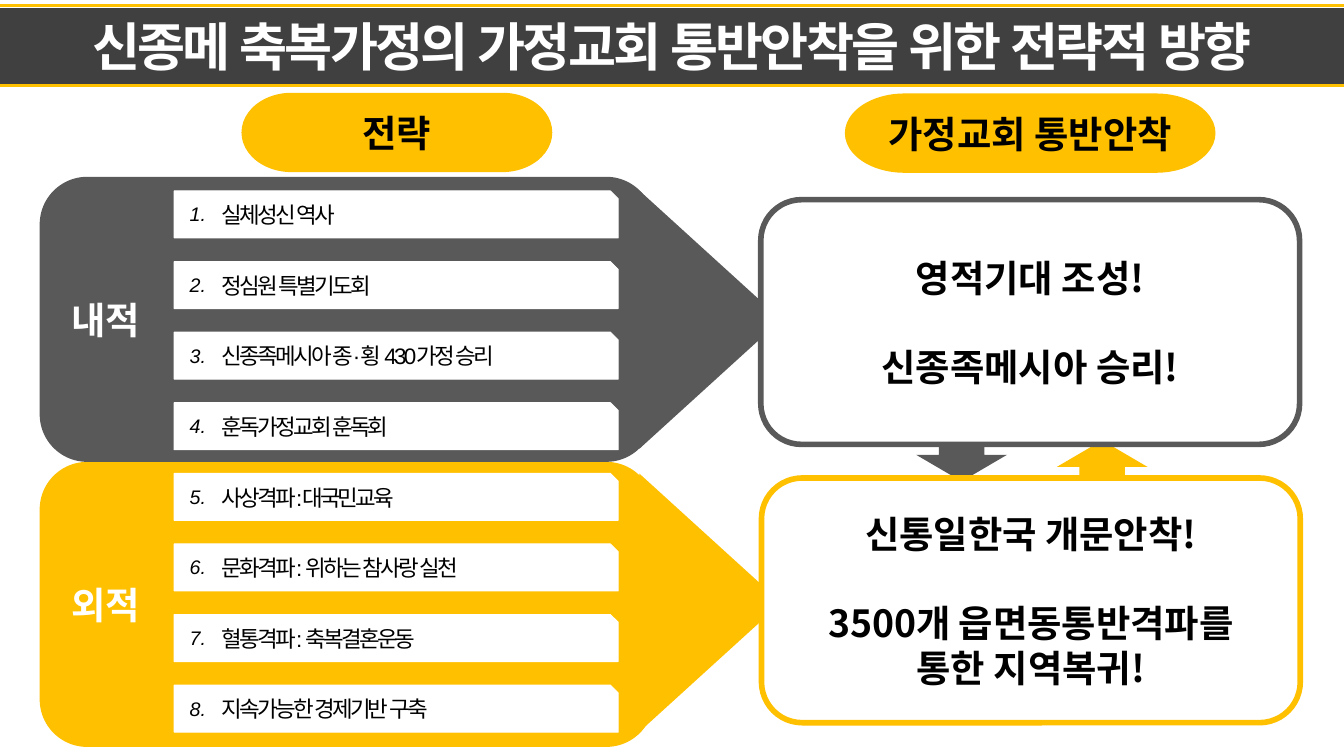
import pptx
import pptx.dml.color
import pptx.enum.shapes
import pptx.enum.text
import pptx.oxml
import pptx.oxml.ns
import pptx.util

SHAPE = pptx.enum.shapes.MSO_SHAPE
ALIGN = pptx.enum.text.PP_ALIGN
PX = 9144  # 100 px to the inch
WIDTH, HEIGHT = 1998, 1123
GRAY, GOLD, DARK, WHITE, BLACK = "595959", "FFC000", "404040", "FFFFFF", "000000"
HEADING_FONT, BODY_FONT = "Noto Sans CJK KR", "Arial"

STRATEGIES = [
    "실체성신 역사",
    "정심원 특별기도회",
    "신종족메시아 종·횡 430가정 승리",
    "훈독가정교회 훈독회",
    "사상격파:대국민교육",
    "문화격파: 위하는 참사랑 실천",
    "혈통격파: 축복결혼운동",
    "지속가능한 경제기반 구축",
]
STRIP_TOP, STRIP_PITCH = 284, 105


def color(value):
    return pptx.dml.color.RGBColor.from_string(value)


def emu(*lengths):
    return [pptx.util.Emu(length * PX) for length in lengths]


def add_block(page, kind, frame, fill, line=None, line_width=1, rotation=0):
    block = page.shapes.add_shape(kind, *emu(*frame))
    block.shadow.inherit = False
    block.rotation = rotation
    block.fill.solid()
    block.fill.fore_color.rgb = color(fill)
    if line:
        block.line.color.rgb = color(line)
        block.line.width = pptx.util.Pt(line_width)
    else:
        block.line.fill.background()
    return block


def add_rule(page, y):
    rule = page.shapes.add_connector(
        pptx.enum.shapes.MSO_CONNECTOR.STRAIGHT, *emu(0, y, WIDTH, y))
    rule.line.color.rgb = color(GOLD)
    rule.line.width = pptx.util.Pt(3)
    rule._element.spPr.append(pptx.oxml.parse_xml(
        f"<a:effectLst {pptx.oxml.ns.nsdecls('a')}/>"))


def write(shape, text, size, ink=BLACK, font=HEADING_FONT, bold=True, italic=False,
          align=ALIGN.CENTER, insets=(10, 5, 10, 5), tracking=0):
    """Fill a shape with middle-anchored text; tracking is in points."""
    frame = shape.text_frame
    frame.word_wrap = True
    frame.vertical_anchor = pptx.enum.text.MSO_ANCHOR.MIDDLE
    (frame.margin_left, frame.margin_top,
     frame.margin_right, frame.margin_bottom) = emu(*insets)
    frame.text = text
    for para in frame.paragraphs:
        para.alignment = align
        for span in para.runs:
            span.font.size = pptx.util.Pt(size)
            span.font.bold = bold
            span.font.italic = italic
            span.font.name = font
            span.font.color.rgb = color(ink)
            properties = span._r.get_or_add_rPr()
            if tracking:
                properties.set("spc", str(tracking * 100))
            east_asian = pptx.oxml.parse_xml(
                f'<a:ea {pptx.oxml.ns.nsdecls("a")} typeface="{font}"/>')
            properties.find(pptx.oxml.ns.qn("a:latin")).addnext(east_asian)
    return frame


def add_title(page, text):
    add_block(page, SHAPE.RECTANGLE, (0, 12, WIDTH, 115), DARK)
    for y in (127, 8):
        add_rule(page, y)
    box = page.shapes.add_textbox(*emu(0, 19, WIDTH, 99))
    write(box, text, 55.9, WHITE, BODY_FONT, insets=(0, 5, 0, 5), tracking=-3)


def add_heading(page, frame, text):
    write(add_block(page, SHAPE.FLOWCHART_TERMINATOR, frame, GOLD), text, 40)


def add_group_panel(page, top, fill, label):
    panel = add_block(page, SHAPE.ROUNDED_RECTANGLE, (59, top, 913, 424), fill)
    write(panel, label, 40, WHITE, align=ALIGN.LEFT, insets=(26, 5, 10, 5))


def add_pointer(page, top, fill):
    add_block(page, SHAPE.ISOSCELES_TRIANGLE, (864, top, 384, 211), fill, rotation=90)


def add_strategy(page, number, text):
    top = STRIP_TOP + (number - 1) * STRIP_PITCH
    strip = add_block(page, SHAPE.SNIP_1_RECTANGLE, (259, top, 660, 70), WHITE, WHITE)
    frame = write(strip, text, 24, font=BODY_FONT, bold=False, align=ALIGN.JUSTIFY,
                  insets=(71, 0, 43, 0), tracking=-3)
    frame.paragraphs[0].line_spacing = 0.9
    box = page.shapes.add_textbox(*emu(258, top - 11, 72, 91))
    write(box, f"{number}.", 21, font=BODY_FONT, bold=False, italic=True,
          insets=(7, 4, 7, 4))


def add_goal(page, left, top, line, text):
    goal = add_block(page, SHAPE.ROUNDED_RECTANGLE, (left, top, 801, 364), WHITE, line, 6)
    frame = write(goal, text, 40)
    frame.paragraphs[1].space_before = pptx.util.Pt(48)


def main():
    deck = pptx.Presentation()
    deck.slide_width, deck.slide_height = emu(WIDTH, HEIGHT)
    page = deck.slides.add_slide(deck.slide_layouts[6])

    add_title(page, "신종메 축복가정의 가정교회 통반안착을 위한 전략적 방향")
    add_block(page, SHAPE.RIGHT_ARROW, (1599, 627, 79, 135), GOLD, rotation=270)
    add_block(page, SHAPE.RIGHT_ARROW, (1390, 609, 79, 135), GRAY, rotation=90)
    add_pointer(page, 370, GRAY)
    add_group_panel(page, 687, GOLD, "외적")
    add_group_panel(page, 263, GRAY, "내적")
    add_heading(page, (359, 138, 462, 118), "전략")
    for number, text in enumerate(STRATEGIES, 1):
        add_strategy(page, number, text)
    add_heading(page, (1256, 139, 551, 118), "가정교회 통반안착")
    add_pointer(page, 791, GOLD)
    add_goal(page, 1131, 297, GRAY, "영적기대 조성!\n신종족메시아 승리!")
    add_goal(page, 1132, 711, GOLD,
             "신통일한국 개문안착!\n3500개 읍면동통반격파를\n통한 지역복귀!")

    deck.save("out.pptx")


if __name__ == "__main__":
    main()
